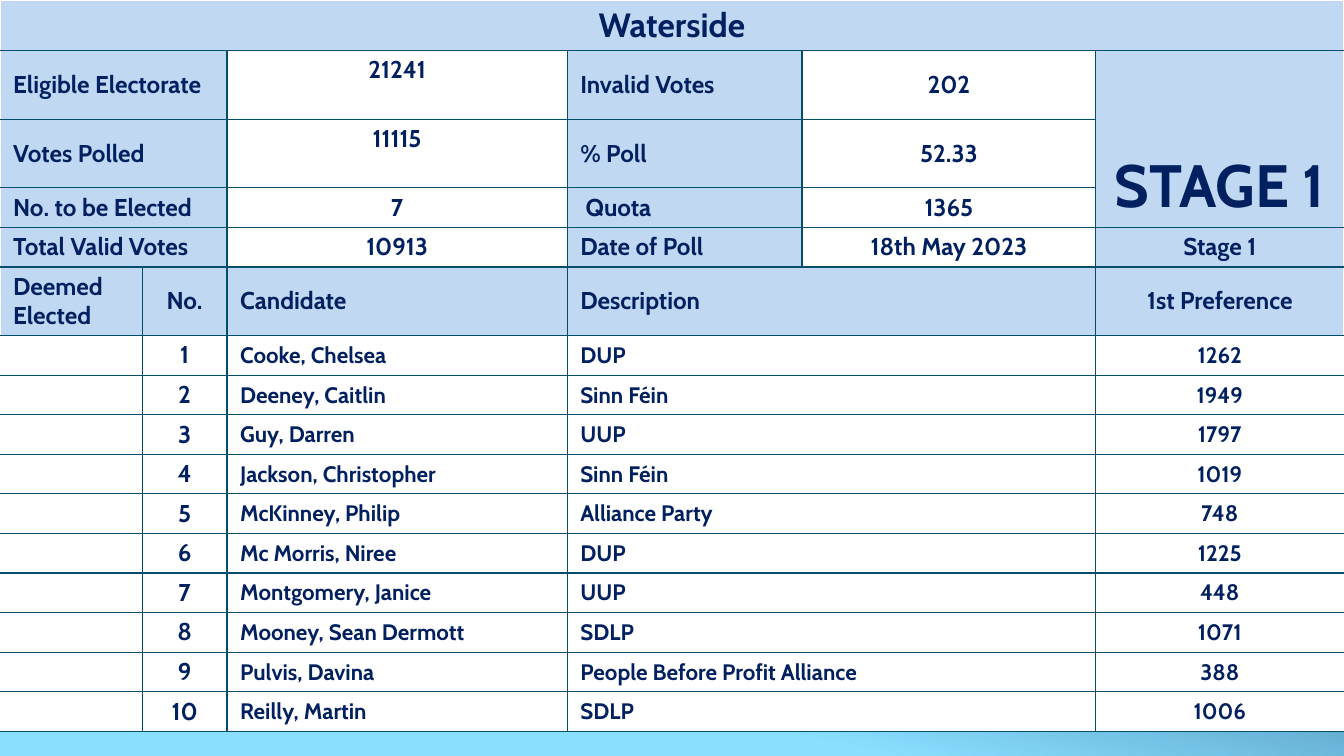
from lxml.etree import SubElement as Sub
from pptx import Presentation
from pptx.dml.color import RGBColor as Rgb
from pptx.enum.text import MSO_ANCHOR as Anchor, PP_ALIGN as Align
from pptx.oxml.ns import qn
from pptx.util import Cm, Pt

HUES = {"ink": "002060", "line": "004E6C", "pale": "C1D8F2", "white": "FFFFFF",
        "deep": "0D3868", "sky": "8ADFFF"}
COLS = [2.69, 1.6, 6.43, 4.44, 5.55, 4.69]
ROWS = [0.95, 1.3, 1.3, 0.75, 0.75, 1.3] + [0.75] * 10
FACTS = [
    ("Eligible Electorate", "21241", "Invalid Votes", "202"),
    ("Votes Polled", "11115", "% Poll", "52.33"),
    ("No. to be Elected", "7", " Quota", "1365"),
    ("Total Valid Votes", "10913", "Date of Poll", "18th May 2023"),
]
HEADS = ["Deemed Elected", "No.", "Candidate", "Description", "1st Preference"]
VOTES = [
    ("Cooke, Chelsea", "DUP", "1262"),
    ("Deeney, Caitlin", "Sinn Féin", "1949"),
    ("Guy, Darren", "UUP", "1797"),
    ("Jackson, Christopher", "Sinn Féin", "1019"),
    ("McKinney, Philip", "Alliance Party", "748"),
    ("Mc Morris, Niree", "DUP", "1225"),
    ("Montgomery, Janice", "UUP", "448"),
    ("Mooney, Sean Dermott", "SDLP", "1071"),
    ("Pulvis, Davina", "People Before Profit Alliance", "388"),
    ("Reilly, Martin", "SDLP", "1006"),
]


def tint(name):
    return Rgb.from_string(HUES[name])


def edge(cell, row, col):
    outer = {"lnL": col == 0 or row == 0, "lnR": col == len(COLS) - 1 or row == 0,
             "lnT": row == 0, "lnB": False}
    props = cell._tc.get_or_add_tcPr()
    for tag, white in outer.items():
        line = Sub(props, qn(f"a:{tag}"), w=str(Pt(1 if white else 0.75)))
        fill = Sub(line, qn("a:solidFill"))
        Sub(fill, qn("a:srgbClr"), val=HUES["white" if white else "line"])


def frame(slide, left, top, width, height):
    shape = slide.shapes.add_table(len(ROWS), len(COLS), Cm(left), Cm(top), Cm(width), Cm(height))
    grid = shape.table
    grid.first_row = grid.horz_banding = False
    for col, size in zip(grid.columns, COLS):
        col.width = Cm(width * size / sum(COLS))
    for row, size in zip(grid.rows, ROWS):
        row.height = Cm(height * size / sum(ROWS))
    for r in range(len(ROWS)):
        for c in range(len(COLS)):
            cell = grid.cell(r, c)
            cell.margin_left = cell.margin_right = Cm(0.25)
            cell.margin_top = cell.margin_bottom = Cm(0.09)
            cell.vertical_anchor = Anchor.MIDDLE
            edge(cell, r, c)
            cell.fill.solid()
            cell.fill.fore_color.rgb = tint("white")
            Sub(cell.text_frame.paragraphs[0]._p, qn("a:endParaRPr"), sz="1200")
    return grid


def put(grid, row, col, text, size=13, fill="white", mid=False, end=None):
    cell = grid.cell(row, col)
    if end:
        cell.merge(grid.cell(*end))
    cell.fill.fore_color.rgb = tint(fill)
    para = cell.text_frame.paragraphs[0]
    para.alignment = Align.CENTER if mid else Align.LEFT
    run = para.add_run()
    run.text = text
    run.font.name = "Cabin"
    run.font.size = Pt(size)
    run.font.bold = True
    run.font.color.rgb = tint("ink")
    return cell


def facts(grid, top):
    for row, (name, count, label, value) in enumerate(FACTS, top):
        put(grid, row, 0, name, fill="pale", end=(row, 1))
        cell = put(grid, row, 2, count, mid=True)
        if row < top + 2:
            cell.vertical_anchor = Anchor.TOP
        put(grid, row, 3, label, fill="pale")
        put(grid, row, 4, value, mid=True)
    stage = put(grid, top, 5, "STAGE 1", 32, "pale", True, (top + 2, 5))
    stage.vertical_anchor = Anchor.BOTTOM
    put(grid, top + 3, 5, "Stage 1", fill="pale", mid=True)


def votes(grid, top):
    for col, text in zip((0, 1, 2, 3, 5), HEADS):
        end = (top, 4) if col == 3 else None
        put(grid, top, col, text, fill="pale", mid=col in (1, 5), end=end)
    for num, (name, party, count) in enumerate(VOTES, 1):
        row = top + num
        put(grid, row, 1, str(num), mid=True)
        put(grid, row, 2, name, 12)
        put(grid, row, 3, party, 12, end=(row, 4))
        put(grid, row, 5, count, 12, mid=True)


def results(slide, left, top, width, height):
    grid = frame(slide, left, top, width, height)
    put(grid, 0, 0, "Waterside", 18, "pale", True, (0, 5))
    facts(grid, 1)
    votes(grid, 5)


def backdrop(slide):
    fill = slide.background.fill
    fill.gradient()
    fill.gradient_angle = 258
    for stop, spot, name in zip(fill.gradient_stops, (0.42, 0.82), ("deep", "sky")):
        stop.position = spot
        stop.color.rgb = tint(name)


def main():
    deck = Presentation()
    deck.slide_width, deck.slide_height = Cm(25.4), Cm(14.29)
    slide = deck.slides.add_slide(deck.slide_layouts[6])
    backdrop(slide)
    results(slide, 0, 0, 25.4, 13.82)
    deck.save("out.pptx")


if __name__ == "__main__":
    main()
